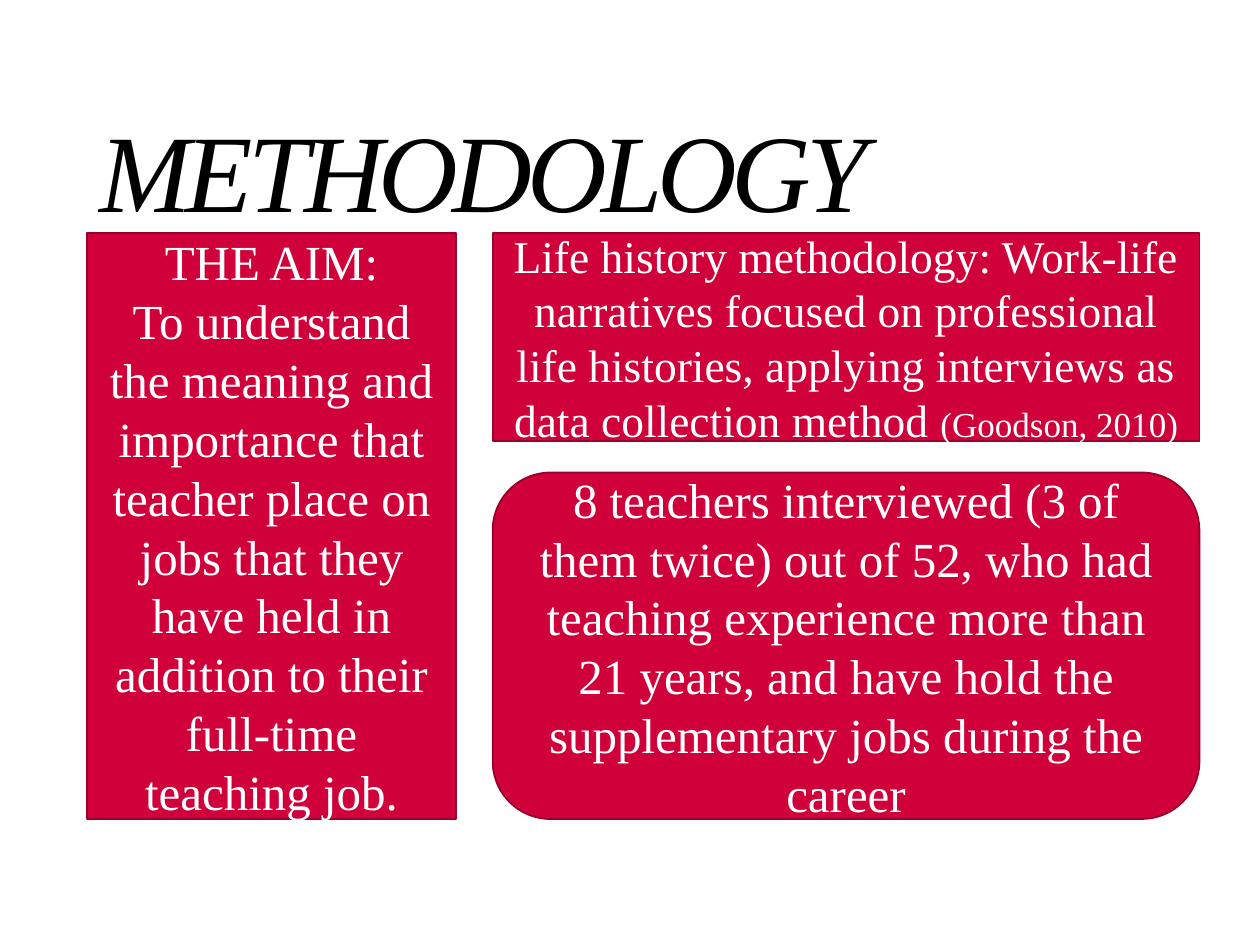
"""Build the methodology slide: a title, the aim, the method and the participants."""
from pptx import Presentation
from pptx.dml.color import RGBColor
from pptx.enum.shapes import MSO_SHAPE
from pptx.enum.text import MSO_ANCHOR, PP_ALIGN
from pptx.util import Inches, Pt

RECT, ROUNDED = MSO_SHAPE.RECTANGLE, MSO_SHAPE.ROUNDED_RECTANGLE
MIDDLE, BOTTOM = MSO_ANCHOR.MIDDLE, MSO_ANCHOR.BOTTOM
CENTER = PP_ALIGN.CENTER

THEME = {
    "font": "Times New Roman",
    "ink": RGBColor(0x00, 0x00, 0x00),
    "panel": RGBColor(0xCF, 0x00, 0x3A),
    "edge": RGBColor(0x99, 0x00, 0x2B),
    "panel_text": RGBColor(0xFF, 0xFF, 0xFF),
    "title_size": Pt(63),
    "body_size": Pt(28),
    "method_size": Pt(26),
    "citation_size": Pt(20),
}


def add_run(paragraph, text, size, color, italic=False):
    run = paragraph.add_run()
    run.text = text
    formats = {"name": THEME["font"], "size": size, "italic": italic}
    for attribute, value in formats.items():
        setattr(run.font, attribute, value)
    run.font.color.rgb = color
    return run


prs = Presentation()
prs.slide_width, prs.slide_height = Inches(10), Inches(7.5)
slide = prs.slides.add_slide(prs.slide_layouts[6])

left, top, bottom = 0.69, 1.85, 6.5
right_left, right_width = 3.91, 5.61
method_height, gap = 1.65, 0.25
sample_top = top + method_height + gap

heading = slide.shapes.add_textbox(Inches(left), Inches(0.4), Inches(8.62), Inches(1.45))
heading.text_frame.word_wrap = True
heading.text_frame.vertical_anchor = BOTTOM
heading_line = heading.text_frame.paragraphs[0]
heading_line.line_spacing = 0.54
title = add_run(heading_line, "METHODOLOGY", THEME["title_size"], THEME["ink"], italic=True)
title.font._element.set("spc", "-300")

aim = [
    [("THE AIM:", "body_size")],
    [("To understand the meaning and importance that teacher place on jobs that they "
      "have held in addition to their full-time teaching job.", "body_size")],
]
method = [
    [("Life history methodology: Work-life narratives focused on professional life "
      "histories, applying interviews as data collection method ", "method_size"),
     ("(Goodson, 2010)", "citation_size")],
]
sample = [
    [("8 teachers interviewed (3 of them twice) out of 52, who had teaching experience "
      "more than 21 years, and have hold the supplementary jobs during the career",
      "body_size")],
]
panels = [
    (RECT, left, top, 2.93, bottom - top, aim),
    (RECT, right_left, top, right_width, method_height, method),
    (ROUNDED, right_left, sample_top, right_width, bottom - sample_top, sample),
]

for outline, x, y, width, height, paragraphs in panels:
    panel = slide.shapes.add_shape(outline, Inches(x), Inches(y), Inches(width), Inches(height))
    panel.shadow.inherit = False
    panel.fill.solid()
    panel.fill.fore_color.rgb = THEME["panel"]
    panel.line.color.rgb = THEME["edge"]
    panel.line.width = Pt(1)
    frame = panel.text_frame
    frame.word_wrap = True
    frame.vertical_anchor = MIDDLE
    for index, runs in enumerate(paragraphs):
        paragraph = frame.add_paragraph() if index else frame.paragraphs[0]
        paragraph.alignment = CENTER
        for text, size in runs:
            add_run(paragraph, text, THEME[size], THEME["panel_text"])

prs.save("out.pptx")
